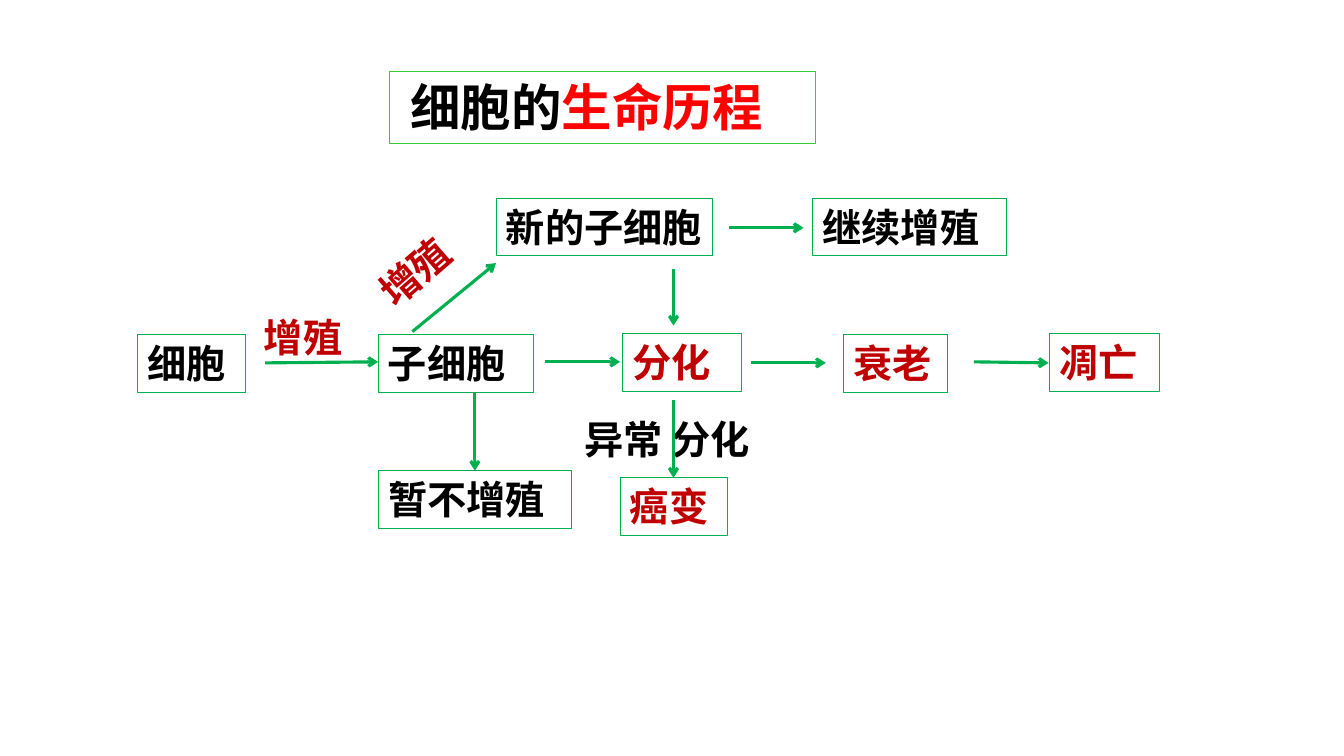
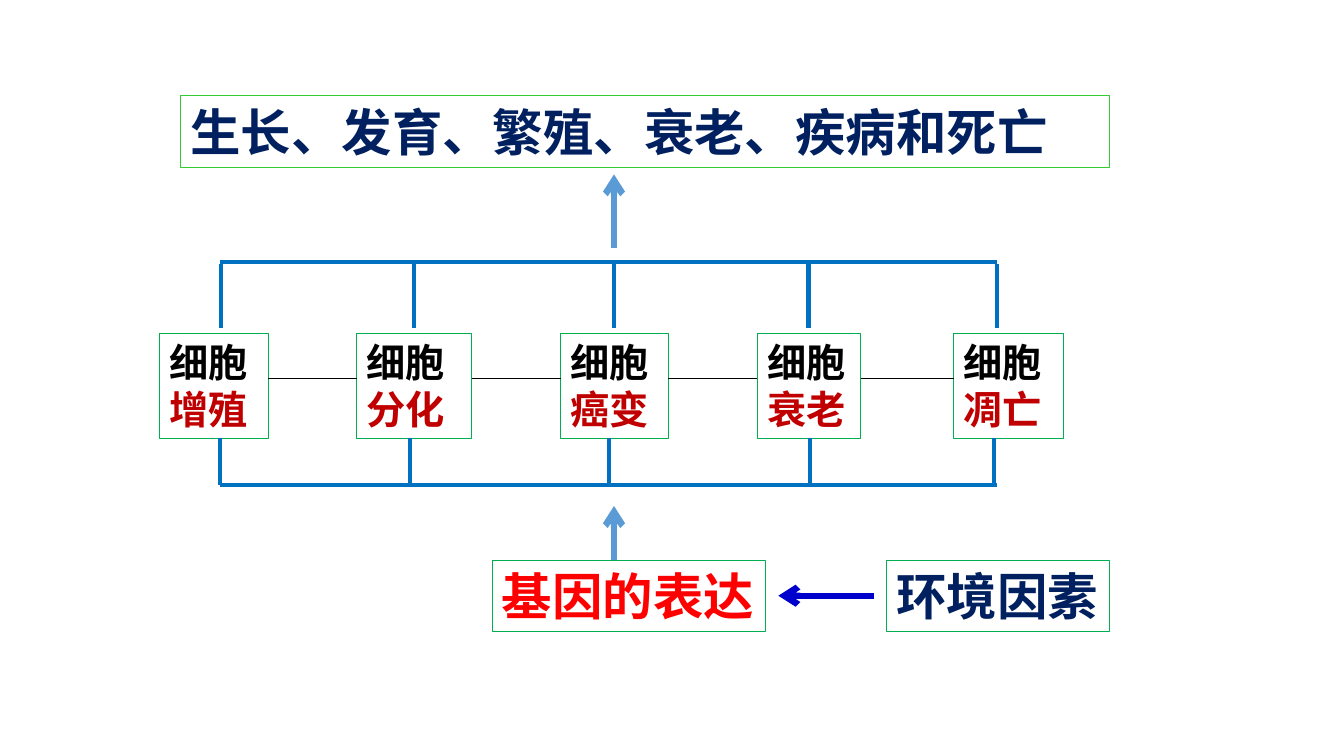
"""Build two diagram slides about the life course of a cell."""
from dataclasses import dataclass
from itertools import pairwise

from lxml import etree
from pptx import Presentation
from pptx.dml.color import RGBColor
from pptx.enum.shapes import MSO_CONNECTOR, MSO_SHAPE
from pptx.enum.text import MSO_ANCHOR, MSO_AUTO_SIZE, PP_ALIGN
from pptx.oxml.ns import qn
from pptx.util import Inches, Pt

RECTANGLE = MSO_SHAPE.RECTANGLE
STRAIGHT = MSO_CONNECTOR.STRAIGHT
TOP = MSO_ANCHOR.TOP
LEFT = PP_ALIGN.LEFT
FIT_SHAPE = MSO_AUTO_SIZE.SHAPE_TO_FIT_TEXT

CELL = 0.1
FONT = "Noto Sans CJK SC"
BLACK, CRIMSON, RED, NAVY = "000000", "C00000", "FF0000", "002060"
GREEN, LIME = "00B050", "33CC33"
BLUE, SKY, ROYAL = "0070C0", "5B9BD5", "0000CC"
BODY_SIZE, TITLE_SIZE = 28, 36
BODY_ROWS, TITLE_ROWS, STAGE_ROWS = 5.7, 7.1, 10.4


@dataclass(frozen=True)
class Box:
    """Text on the grid; wording holds (text, colour) pairs."""
    left: float
    top: float
    columns: float
    wording: tuple[tuple[str, str], ...]
    rows: float = BODY_ROWS
    size: int = BODY_SIZE
    border: str | None = GREEN
    wrap: bool = True
    rotation: float = 0


@dataclass(frozen=True)
class Line:
    """A straight line on the grid, with an optional arrowhead at its end."""
    start: tuple[float, float]
    end: tuple[float, float]
    colour: str = GREEN
    width: float = 2.25
    arrow: bool = True


@dataclass(frozen=True)
class Stage:
    """One stage of the cell, with the columns of its upper and lower stems."""
    name: str
    left: float
    columns: float
    upper: float
    lower: float


LIFE_BOXES = (
    Box(38.6, 7.1, 42.3, ((" 细胞的", BLACK), ("生命历程", RED)),
        TITLE_ROWS, TITLE_SIZE, LIME),
    Box(49.2, 19.7, 21.5, (("新的子细胞", BLACK),), wrap=False),
    Box(80.6, 19.7, 19.2, (("继续增殖", BLACK),)),
    Box(13.6, 33.2, 10.8, (("细胞", BLACK),)),
    Box(37.5, 33.2, 15.4, (("子细胞", BLACK),)),
    Box(61.7, 33.1, 11.8, (("分化", CRIMSON),)),
    Box(83.7, 33.2, 10.3, (("衰老", CRIMSON),)),
    Box(104.1, 33.1, 10.9, (("凋亡", CRIMSON),)),
    Box(37.5, 46.7, 19.2, (("暂不增殖", BLACK),)),
    Box(61.5, 47.4, 10.7, (("癌变", CRIMSON),)),
    Box(57, 40.7, 19.8, (("异常 分化", BLACK),), border=None),
    Box(25.2, 30.6, 10.3, (("增殖", CRIMSON),), border=None),
    Box(36.2, 23.9, 10.3, (("增殖", CRIMSON),), border=None, rotation=319),
)
LIFE_ARROWS = (
    Line((26.3, 36), (37.5, 35.9)),
    Line((40.9, 32.9), (49.2, 26.1)),
    Line((47.1, 38.9), (47.1, 46.7)),
    Line((54.1, 35.9), (61.5, 35.9)),
    Line((66.8, 26.7), (66.8, 32.3)),
    Line((66.8, 39.7), (66.8, 47.4)),
    Line((72.3, 22.6), (79.7, 22.6)),
    Line((74.5, 36), (81.9, 36)),
    Line((96.6, 35.9), (104, 36)),
)

STAGES = (
    Stage("增殖", 15.8, 10.8, 21.9, 21.8),
    Stage("分化", 35.4, 11.4, 41.1, 40.7),
    Stage("癌变", 55.6, 10.7, 60.9, 60.4),
    Stage("衰老", 75.1, 10.3, 80.2, 80.3),
    Stage("凋亡", 94.6, 10.9, 98.9, 98.6),
)
STAGE_TOP, LINK_ROW = 33.1, 37.5
UPPER_RAIL, LOWER_RAIL = 26, 48.1
RAIL_LEFT, RAIL_RIGHT = 21.8, 98.9
FACTOR_TOP, FACTOR_MIDDLE, CENTRE = 55.6, 59.1, 60.9
FACTOR_BOXES = (
    Box(17.9, 9.5, 92.1, (("生长、发育、繁殖、衰老、疾病和死亡", NAVY),),
        TITLE_ROWS, TITLE_SIZE, LIME),
    Box(48.8, FACTOR_TOP, 27.1, (("基因的表达", RED),),
        TITLE_ROWS, TITLE_SIZE, wrap=False),
    Box(87.9, FACTOR_TOP, 22.1, (("环境因素", NAVY),),
        TITLE_ROWS, TITLE_SIZE, wrap=False),
)
FACTOR_ARROWS = (
    Line((CENTRE, 24.6), (CENTRE, 17.3), SKY, 4.5),
    Line((CENTRE, FACTOR_TOP), (CENTRE, 50.2), SKY, 4.5),
    Line((86.7, FACTOR_MIDDLE), (77.2, FACTOR_MIDDLE), ROYAL, 4.5),
)


def grid(cells: float) -> int:
    """Turn grid cells into a length."""
    return Inches(cells * CELL)


def colour_of(hex_code: str) -> RGBColor:
    """Turn a hex string into a colour."""
    return RGBColor.from_string(hex_code)


def draw_box(slide, box: Box) -> None:
    """Draw a framed box, or a bare label when it has no border."""
    area = [grid(cells) for cells in (box.left, box.top, box.columns, box.rows)]
    if box.border:
        shape = slide.shapes.add_shape(RECTANGLE, *area)
        shape.shadow.inherit = False
        shape.fill.background()
        shape.line.color.rgb = colour_of(box.border)
        shape.line.width = Pt(0.75)
    else:
        shape = slide.shapes.add_textbox(*area)
    shape.rotation = box.rotation
    frame = shape.text_frame
    frame.word_wrap = box.wrap
    frame.auto_size = FIT_SHAPE
    frame.vertical_anchor = TOP
    paragraph = frame.paragraphs[0]
    paragraph.alignment = LEFT
    paragraph.font.name = FONT
    paragraph.font.size = Pt(box.size)
    paragraph.font.bold = True
    defaults = paragraph._p.get_or_add_pPr().find(qn("a:defRPr"))
    etree.SubElement(defaults, qn("a:ea"), typeface=FONT)
    for text, colour in box.wording:
        run = paragraph.add_run()
        run.text = text
        run.font.color.rgb = colour_of(colour)


def draw_line(slide, line: Line) -> None:
    """Draw a straight line or arrow."""
    ends = [grid(cells) for cells in (*line.start, *line.end)]
    connector = slide.shapes.add_connector(STRAIGHT, *ends)
    connector.line.color.rgb = colour_of(line.colour)
    connector.line.width = Pt(line.width)
    properties = connector._element.spPr
    if line.arrow:
        outline = properties.find(qn("a:ln"))
        etree.SubElement(outline, qn("a:tailEnd"), type="arrow")
    etree.SubElement(properties, qn("a:effectLst"))


def stage_boxes() -> list[Box]:
    """List the row of stage boxes."""
    return [Box(stage.left, STAGE_TOP, stage.columns,
                (("细胞", BLACK), (stage.name, CRIMSON)), STAGE_ROWS)
            for stage in STAGES]


def stage_lines() -> list[Line]:
    """List the links between stages, and the rails with their stems."""
    links = [Line((stage.left + stage.columns, LINK_ROW), (following.left, LINK_ROW),
                  BLACK, 0.5, False)
             for stage, following in pairwise(STAGES)]
    spans = [((RAIL_LEFT, row), (RAIL_RIGHT, row)) for row in (UPPER_RAIL, LOWER_RAIL)]
    for stage in STAGES:
        spans.append(((stage.upper, 26.2), (stage.upper, 32.5)))
        spans.append(((stage.lower, STAGE_TOP + STAGE_ROWS), (stage.lower, LOWER_RAIL)))
    return links + [Line(start, end, BLUE, 3, False) for start, end in spans]


def draw_slide(presentation, boxes: tuple[Box, ...], lines: tuple[Line, ...]) -> None:
    """Add a blank slide holding the boxes and lines."""
    slide = presentation.slides.add_slide(presentation.slide_layouts[6])
    for box in boxes:
        draw_box(slide, box)
    for line in lines:
        draw_line(slide, line)


def main() -> None:
    """Build and save the presentation."""
    presentation = Presentation()
    presentation.slide_width = Inches(13.33)
    presentation.slide_height = Inches(7.5)
    draw_slide(presentation, LIFE_BOXES, LIFE_ARROWS)
    draw_slide(presentation, (*FACTOR_BOXES, *stage_boxes()),
               (*FACTOR_ARROWS, *stage_lines()))
    presentation.save("out.pptx")


if __name__ == "__main__":
    main()
